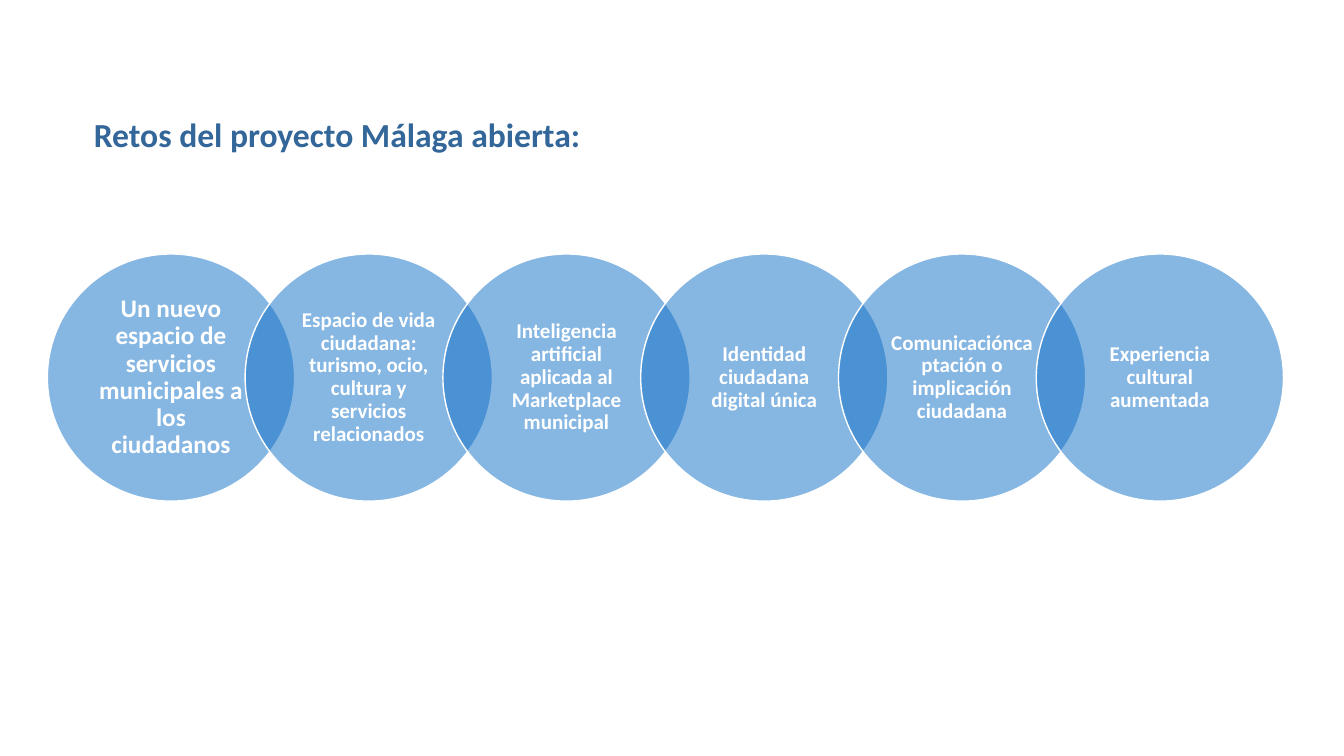
import pptx
import pptx.dml.color
import pptx.enum.shapes
import pptx.enum.text
import pptx.oxml
import pptx.oxml.ns
import pptx.util
from pptx.util import Inches

TITLE = "Retos del proyecto Málaga abierta:"
CHALLENGES = [
    ("Un nuevo espacio de servicios municipales a los ciudadanos", 18),
    ("Espacio de vida ciudadana: turismo, ocio, cultura y servicios relacionados", 15),
    ("Inteligencia artificial aplicada al Marketplace municipal", 15),
    ("Identidad ciudadana digital única", 15),
    ("Comunicacióncaptación o implicación ciudadana", 15),
    ("Experiencia cultural aumentada", 15),
]
OVERLAP = 0.2  # share of a diameter that neighbouring circles have in common


def color(hex_string):
    return pptx.dml.color.RGBColor.from_string(hex_string)


def format_text(frame, text, size, hex_string, alignment, anchor):
    frame.word_wrap = True
    frame.auto_size = pptx.enum.text.MSO_AUTO_SIZE.NONE
    frame.vertical_anchor = anchor
    frame.text = text
    para = frame.paragraphs[0]
    para.alignment = alignment
    para.line_spacing = 0.9
    para.font.name = "Calibri"
    para.font.size = pptx.util.Pt(size)
    para.font.bold = True
    para.font.color.rgb = color(hex_string)


def set_opacity(shape, percent):
    fill_color = shape.fill._xPr.find(".//" + pptx.oxml.ns.qn("a:srgbClr"))
    alpha = pptx.oxml.parse_xml(
        f'<a:alpha {pptx.oxml.ns.nsdecls("a")} val="{percent * 1000}"/>')
    fill_color.append(alpha)


def place_title(slide, left, top, width, height):
    title = slide.shapes.title
    title.left, title.top = Inches(left), Inches(top)
    title.width, title.height = Inches(width), Inches(height)
    format_text(title.text_frame, TITLE, 24, "336699",
                pptx.enum.text.PP_ALIGN.LEFT, pptx.enum.text.MSO_ANCHOR.TOP)


def add_circle(slide, left, top, diameter, text, size):
    circle = slide.shapes.add_shape(
        pptx.enum.shapes.MSO_SHAPE.OVAL,
        Inches(left), Inches(top), Inches(diameter), Inches(diameter))
    circle.shadow.inherit = False
    circle.fill.solid()
    circle.fill.fore_color.rgb = color("0F6FC6")
    set_opacity(circle, 50)
    circle.line.color.rgb = color("FFFFFF")
    circle.line.width = pptx.util.Pt(1)
    frame = circle.text_frame
    frame.margin_left = frame.margin_right = Inches(0.13)
    frame.margin_top = frame.margin_bottom = Inches(0.02)
    format_text(frame, text, size, "FFFFFF",
                pptx.enum.text.PP_ALIGN.CENTER, pptx.enum.text.MSO_ANCHOR.MIDDLE)


def add_circle_chain(slide, left, top, width):
    """Fill the width with equal circles that overlap their neighbours."""
    step_share = 1 - OVERLAP
    diameter = width / (1 + step_share * (len(CHALLENGES) - 1))
    for index, (text, size) in enumerate(CHALLENGES):
        add_circle(slide, left + index * step_share * diameter, top,
                   diameter, text, size)


def main():
    deck = pptx.Presentation()
    deck.slide_width, deck.slide_height = Inches(13.33), Inches(7.5)
    slide = deck.slides.add_slide(deck.slide_layouts.get_by_name("Title Only"))
    place_title(slide, 0.83, 1.13, 11.67, 0.58)
    add_circle_chain(slide, 0.47, 2.52, 12.26)
    deck.save("out.pptx")


if __name__ == "__main__":
    main()
